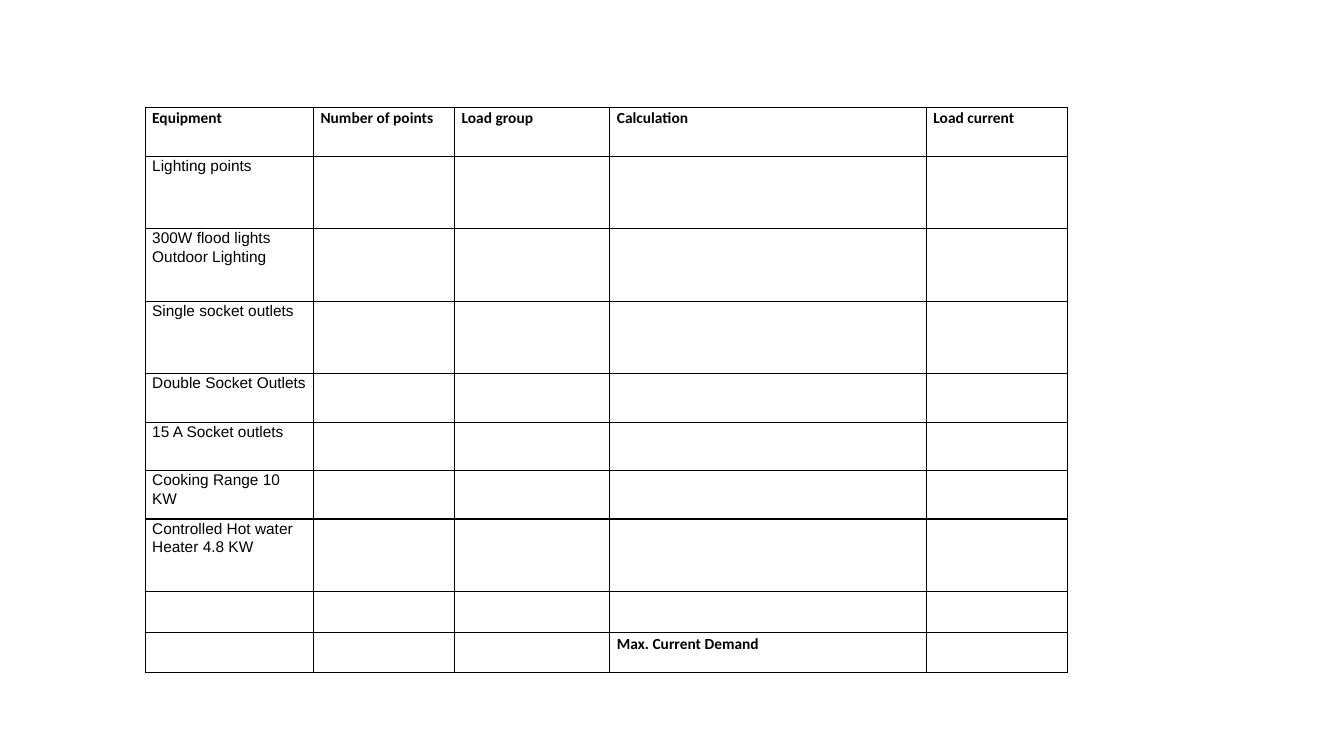
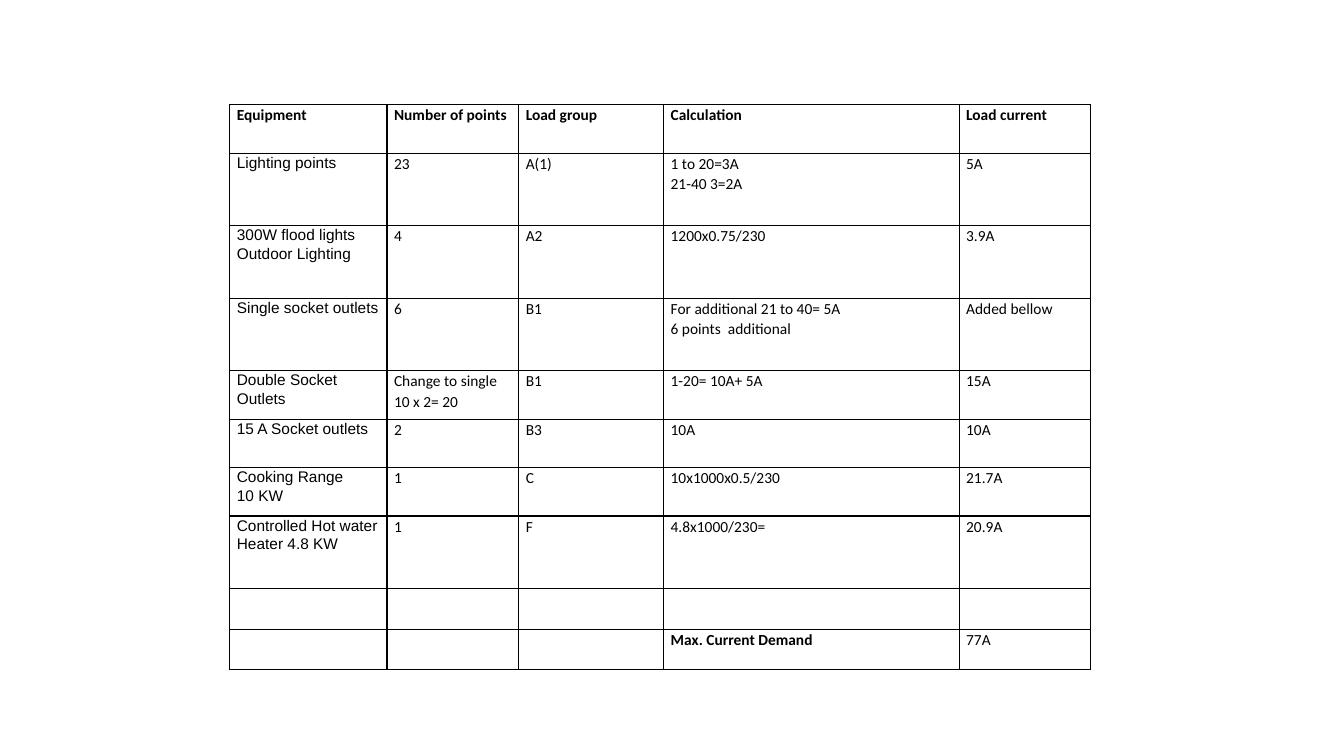
from dataclasses import dataclass

from lxml.etree import SubElement as Sub
from pptx import Presentation as Deck
from pptx.dml.color import RGBColor as Rgb
from pptx.oxml.ns import qn
from pptx.util import Inches as Inch, Pt


@dataclass(frozen=True)
class Theme:
    ink: str = "000000"
    head: str = "Calibri"
    label: str = "Arial"
    size: int = 11
    lead: float = 1.07
    rule: int = 1
    inset: float = 0.07


HEAD = ["Equipment", "Number of points", "Load group", "Calculation", "Load current"]
ITEMS = ["Lighting points", "300W flood lights Outdoor Lighting",
         "Single socket outlets", "Double Socket Outlets", "15 A Socket outlets",
         "Cooking Range 10 KW", "Controlled Hot water Heater 4.8 KW"]
TOTAL = "Max. Current Demand"
LOADS = [["23", "A(1)", "1 to 20=3A\n21-40 3=2A", "5A"],
         ["4", "A2", "1200x0.75/230", "3.9A"],
         ["6", "B1", "For additional 21 to 40= 5A\n6 points  additional", "Added bellow"],
         ["Change to single\n10 x 2= 20", "B1", "1-20= 10A+ 5A", "15A"],
         ["2", "B3", "10A", "10A"],
         ["1", "C", "10x1000x0.5/230", "21.7A"],
         ["1", "F", "4.8x1000/230=", "20.9A"]]
SHARES = [1.67, 1.4, 1.54, 3.14, 1.4]
DEEP, MID = 9.6, 6.4
ROWS = [MID, DEEP, DEEP, DEEP, MID, MID, MID, DEEP, 5.47, 5.2]


class Board:
    """Draw on slides laid out on a grid of 100 columns by 100 rows."""

    def __init__(self, theme):
        self.theme = theme
        self.deck = Deck()
        self.deck.slide_width, self.deck.slide_height = Inch(13.33), Inch(7.5)
        self.slide = None

    def col(self, n):
        return round(self.deck.slide_width * n / 100)

    def row(self, n):
        return round(self.deck.slide_height * n / 100)

    def add(self):
        self.slide = self.deck.slides.add_slide(self.deck.slide_layouts[6])

    def edge(self, cell):
        props = cell._tc.get_or_add_tcPr()
        for side in "LRTB":
            line = Sub(props, qn(f"a:ln{side}"), w=str(Pt(self.theme.rule)))
            paint = Sub(line, qn("a:solidFill"))
            Sub(paint, qn("a:srgbClr"), val=self.theme.ink)

    def text(self, frame, words, face, bold):
        look = {"name": face, "size": Pt(self.theme.size), "bold": bold}
        for i, line in enumerate(words.split("\n")):
            para = frame.add_paragraph() if i else frame.paragraphs[0]
            para.line_spacing = self.theme.lead
            run = para.add_run()
            run.text = line
            for key, value in look.items():
                setattr(run.font, key, value)
            run.font.color.rgb = Rgb.from_string(self.theme.ink)

    def table(self, left, top, width, data):
        form = {"margin_left": Inch(self.theme.inset), "margin_right": Inch(self.theme.inset),
                "margin_top": 0, "margin_bottom": 0}
        grid = self.slide.shapes.add_table(
            len(ROWS), len(SHARES), self.col(left), self.row(top),
            self.col(width), self.row(sum(ROWS))).table
        grid.first_row = grid.horz_banding = False
        for column, share in zip(grid.columns, SHARES):
            column.width = self.col(width * share / sum(SHARES))
        for band, high in zip(grid.rows, ROWS):
            band.height = self.row(high)
        for r, line in enumerate(data):
            for c, words in enumerate(line):
                cell = grid.cell(r, c)
                for key, value in form.items():
                    setattr(cell, key, value)
                self.edge(cell)
                cell.fill.background()
                if words:
                    face = self.theme.label if r and not c else self.theme.head
                    self.text(cell.text_frame, words, face, r == 0 or words == TOTAL)


def fill(items, loads, total):
    body = [[item, *load] for item, load in zip(items, loads)]
    return [HEAD, *body, [""] * 5, ["", "", "", TOTAL, total]]


def main():
    board = Board(Theme())
    board.add()
    board.table(10.8, 14.27, 68.64, fill(ITEMS, [[""] * 4] * len(ITEMS), ""))
    board.add()
    split = [item.replace("Range ", "Range\n") for item in ITEMS]
    board.table(17.1, 13.87, 64.07, fill(split, LOADS, "77A"))
    board.deck.save("out.pptx")


if __name__ == "__main__":
    main()
